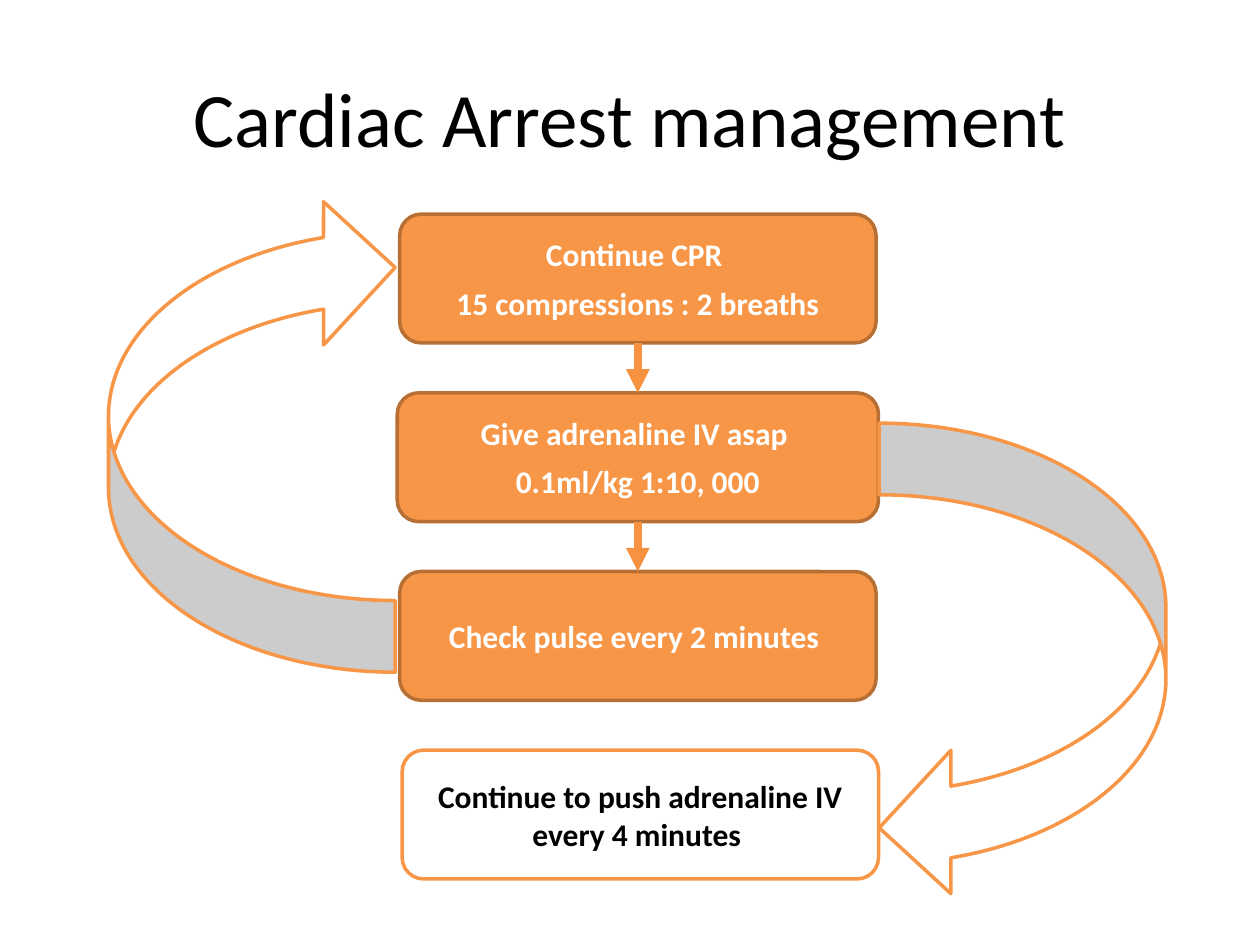
from lxml import etree
from pptx import Presentation
from pptx.dml.color import RGBColor
from pptx.enum.shapes import MSO_CONNECTOR, MSO_SHAPE
from pptx.enum.text import MSO_ANCHOR, PP_ALIGN
from pptx.oxml.ns import qn
from pptx.util import Pt

ORANGE = RGBColor(0xF7, 0x96, 0x46)
DARK_ORANGE = RGBColor(0xB7, 0x6F, 0x34)
ARROW_ORANGE = RGBColor(0xF6, 0x92, 0x40)
WHITE = RGBColor(0xFF, 0xFF, 0xFF)
BLACK = RGBColor(0, 0, 0)
FONT = "Calibri"

CENTER_X = 364.5
BOX_TOP, BOX_HEIGHT, BOX_PITCH = 122.4, 73.6, 102.1


def add_filled_shape(kind, left, top, width, height, fill, line):
    shape = slide.shapes.add_shape(kind, Pt(left), Pt(top), Pt(width), Pt(height))
    shape.shadow.inherit = False
    shape.fill.solid()
    shape.fill.fore_color.rgb = fill
    shape.line.color.rgb = line
    shape.line.width = Pt(2)
    return shape


def add_text(paragraph, text, size, color, bold):
    paragraph.alignment = PP_ALIGN.CENTER
    run = paragraph.add_run()
    run.text = text
    run.font.name = FONT
    run.font.size = Pt(size)
    run.font.bold = bold
    run.font.color.rgb = color


presentation = Presentation()
presentation.slide_width = Pt(720)
presentation.slide_height = Pt(540)
slide = presentation.slides.add_slide(presentation.slide_layouts[5])

title = slide.shapes.title
title.left, title.top, title.width, title.height = Pt(36), Pt(21.6), Pt(648), Pt(90)
title.text_frame.vertical_anchor = MSO_ANCHOR.MIDDLE
add_text(title.text_frame.paragraphs[0], "Cardiac Arrest management", 44, BLACK, False)

# Steps: center, width, fill, line, text color, lines of text
steps = [
    (CENTER_X, 272.2, ORANGE, DARK_ORANGE, WHITE,
     ["Continue CPR ", "15 compressions : 2 breaths"]),
    (CENTER_X, 275, ORANGE, DARK_ORANGE, WHITE,
     ["Give adrenaline IV asap ", "0.1ml/kg 1:10, 000"]),
    (CENTER_X, 272.2, ORANGE, DARK_ORANGE, WHITE,
     ["Check pulse every 2 minutes "]),
    (CENTER_X + 1.4, 272.2, WHITE, ORANGE, BLACK,
     ["Continue to push adrenaline IV every 4 minutes "]),
]
for index, (center, width, fill, line, color, texts) in enumerate(steps):
    box = add_filled_shape(MSO_SHAPE.ROUNDED_RECTANGLE, center - width / 2,
                           BOX_TOP + index * BOX_PITCH, width, BOX_HEIGHT, fill, line)
    frame = box.text_frame
    frame.word_wrap = True
    frame.vertical_anchor = MSO_ANCHOR.MIDDLE
    for number, text in enumerate(texts):
        paragraph = frame.add_paragraph() if number else frame.paragraphs[0]
        add_text(paragraph, text, 18, color, True)
        if number < len(texts) - 1:
            paragraph.space_after = Pt(6)

# Straight arrows between the first three steps
for index in range(2):
    start = BOX_TOP + index * BOX_PITCH + BOX_HEIGHT
    end = BOX_TOP + (index + 1) * BOX_PITCH
    arrow = slide.shapes.add_connector(MSO_CONNECTOR.STRAIGHT, Pt(CENTER_X), Pt(start),
                                       Pt(CENTER_X), Pt(end))
    arrow.line.color.rgb = ARROW_ORANGE
    arrow.line.width = Pt(4.5)
    etree.SubElement(arrow.line._get_or_add_ln(), qn("a:tailEnd"), type="triangle")
    etree.SubElement(arrow._element.spPr, qn("a:effectLst"))

# Curved arrows: back to CPR on the left, on to repeat adrenaline on the right
for left, top, rotation in [(62, 111.9, 180), (502.4, 241.8, 0)]:
    loop = add_filled_shape(MSO_SHAPE.CURVED_LEFT_ARROW, left, top, 163.8, 272.2,
                            WHITE, ORANGE)
    loop.rotation = rotation

presentation.save("out.pptx")
